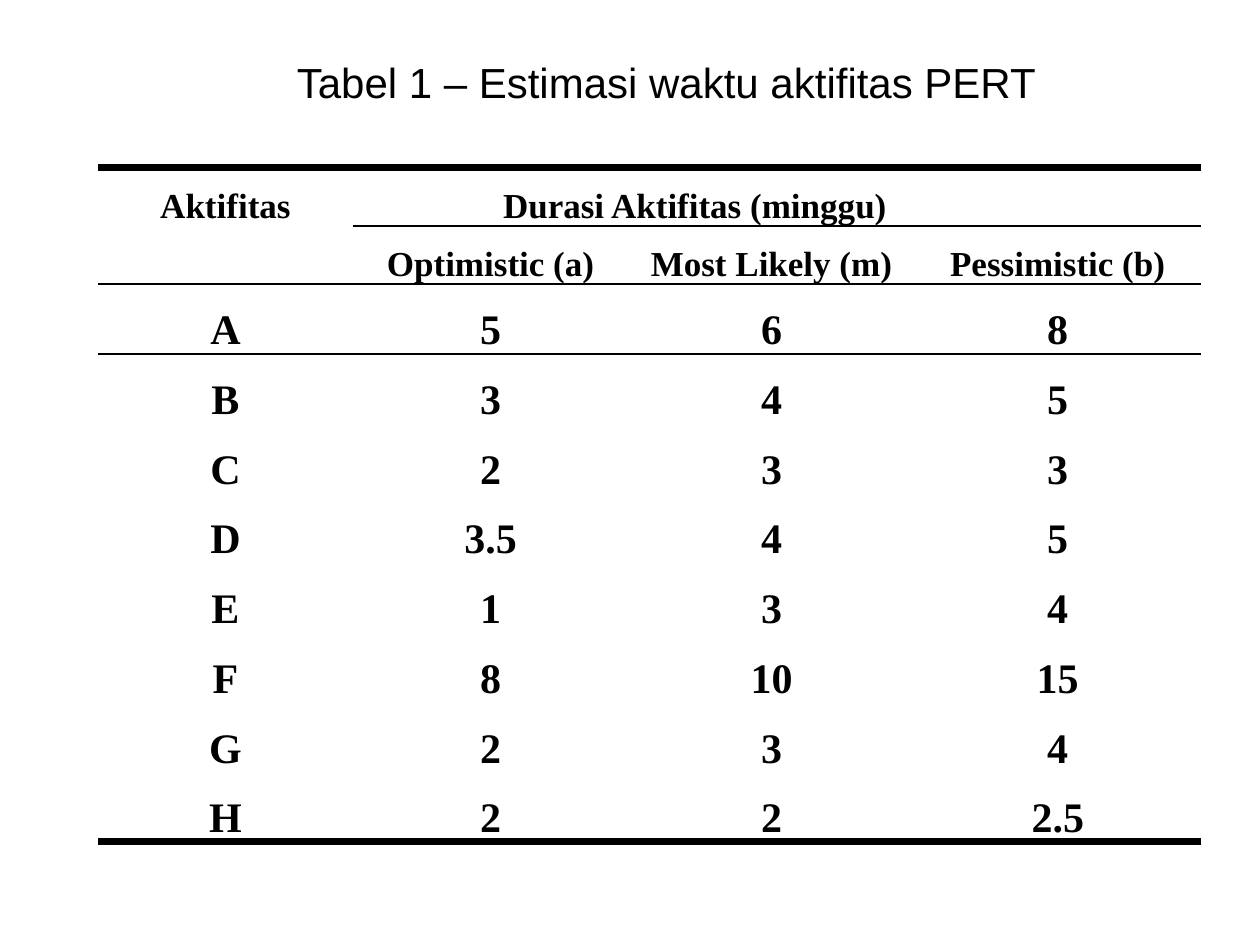
from lxml import etree
from pptx import Presentation
from pptx.dml.color import RGBColor
from pptx.enum.text import MSO_ANCHOR, MSO_AUTO_SIZE, PP_ALIGN
from pptx.oxml.ns import qn
from pptx.util import Cm, Pt

CENTER, JUSTIFY = PP_ALIGN.CENTER, PP_ALIGN.JUSTIFY
MIDDLE, TOP = MSO_ANCHOR.MIDDLE, MSO_ANCHOR.TOP
NO_AUTOFIT = MSO_AUTO_SIZE.NONE
TITLE_ONLY = 5
PLAIN_TABLE = "{2D5ABB26-0587-4C30-8999-92F81FD0307C}"
BLACK = "000000"
THICK, MEDIUM, THIN = 4.5, 1.5, 1

HEADINGS = ["Optimistic (a)", "Most Likely (m)", "Pessimistic (b)"]
ACTIVITIES = [
    ["A", "5", "6", "8"],
    ["B", "3", "4", "5"],
    ["C", "2", "3", "3"],
    ["D", "3.5", "4", "5"],
    ["E", "1", "3", "4"],
    ["F", "8", "10", "15"],
    ["G", "2", "3", "4"],
    ["H", "2", "2", "2.5"],
]
COLUMN_WIDTHS = [5.13, 5.56, 5.77, 5.77]
ROW_HEIGHTS = [0.91, 1.12] + [1.07] * len(ACTIVITIES)


def color(value):
    return RGBColor.from_string(value)


def write(frame, text, size=24, font="Times New Roman", bold=True,
          align=CENTER, spacing=None, margin=0, indent=0):
    para = frame.paragraphs[0]
    properties = para._p.get_or_add_pPr()
    properties.set("marL", str(Cm(margin)))
    properties.set("indent", str(Cm(indent)))
    para.alignment = align
    para.line_spacing = spacing
    span = para.add_run()
    span.text = text
    span.font.name = font
    span.font.size = Pt(size)
    span.font.bold = bold
    span.font.color.rgb = color(BLACK)


class SlideBuilder:
    def __init__(self, deck):
        self.page = deck.slides.add_slide(deck.slide_layouts[TITLE_ONLY])

    def title(self, text, left, top, width, height):
        box = self.page.shapes.title
        box.left, box.top, box.width, box.height = map(Cm, (left, top, width, height))
        frame = box.text_frame
        frame.word_wrap = True
        frame.auto_size = NO_AUTOFIT
        frame.vertical_anchor = MIDDLE
        write(frame, text, font="Arial", bold=False, align=JUSTIFY, indent=0.95)

    def table(self, left, top, widths, heights):
        shape = self.page.shapes.add_table(
            len(heights), len(widths), Cm(left), Cm(top),
            Cm(sum(widths)), Cm(sum(heights)))
        table = shape.table
        table.first_row = table.horz_banding = False
        table._tbl.tblPr.find(qn("a:tableStyleId")).text = PLAIN_TABLE
        for column, width in zip(table.columns, widths):
            column.width = Cm(width)
        for row, height in zip(table.rows, heights):
            row.height = Cm(height)
        return table

    def cell(self, cell, text="", above=None, below=None, **style):
        cell.margin_left = cell.margin_right = Cm(0.18)
        cell.margin_top = cell.margin_bottom = 0
        cell.vertical_anchor = TOP
        self.border(cell, "a:lnT", above)
        self.border(cell, "a:lnB", below)
        cell.fill.background()
        if text:
            write(cell.text_frame, text, spacing=1.5, **style)

    def border(self, cell, side, width):
        if width is None:
            return
        line = etree.SubElement(cell._tc.get_or_add_tcPr(), qn(side), w=str(Pt(width)))
        fill = etree.SubElement(line, qn("a:solidFill"))
        etree.SubElement(fill, qn("a:srgbClr"), val=BLACK)


def main():
    deck = Presentation()
    deck.slide_width, deck.slide_height = Cm(25.4), Cm(19.05)
    builder = SlideBuilder(deck)

    builder.title("Tabel 1 – Estimasi waktu aktifitas PERT", 4.78, 0.99, 19.46, 1.3)

    # Two heading rows with merged cells
    table = builder.table(1.98, 3.38, COLUMN_WIDTHS, ROW_HEIGHTS)
    table.cell(0, 0).merge(table.cell(1, 0))
    table.cell(0, 1).merge(table.cell(0, 3))
    builder.cell(table.cell(0, 0), "Aktifitas", THICK, MEDIUM, size=20)
    builder.cell(table.cell(0, 1), "Durasi Aktifitas (minggu)", THICK, THIN,
                 size=20, align=JUSTIFY, margin=1.9, indent=0.95)
    for column in (2, 3):
        builder.cell(table.cell(0, column), above=THICK, below=THIN)
    builder.cell(table.cell(1, 0), below=MEDIUM)
    for column, heading in enumerate(HEADINGS, 1):
        builder.cell(table.cell(1, column), heading, THIN, MEDIUM, size=20)

    # Activity rows
    last = len(ACTIVITIES) - 1
    for index, values in enumerate(ACTIVITIES):
        above = MEDIUM if index == 0 else None
        below = THICK if index == last else None
        for column, value in enumerate(values):
            builder.cell(table.cell(index + 2, column), value, above, below)

    deck.save("out.pptx")


if __name__ == "__main__":
    main()
